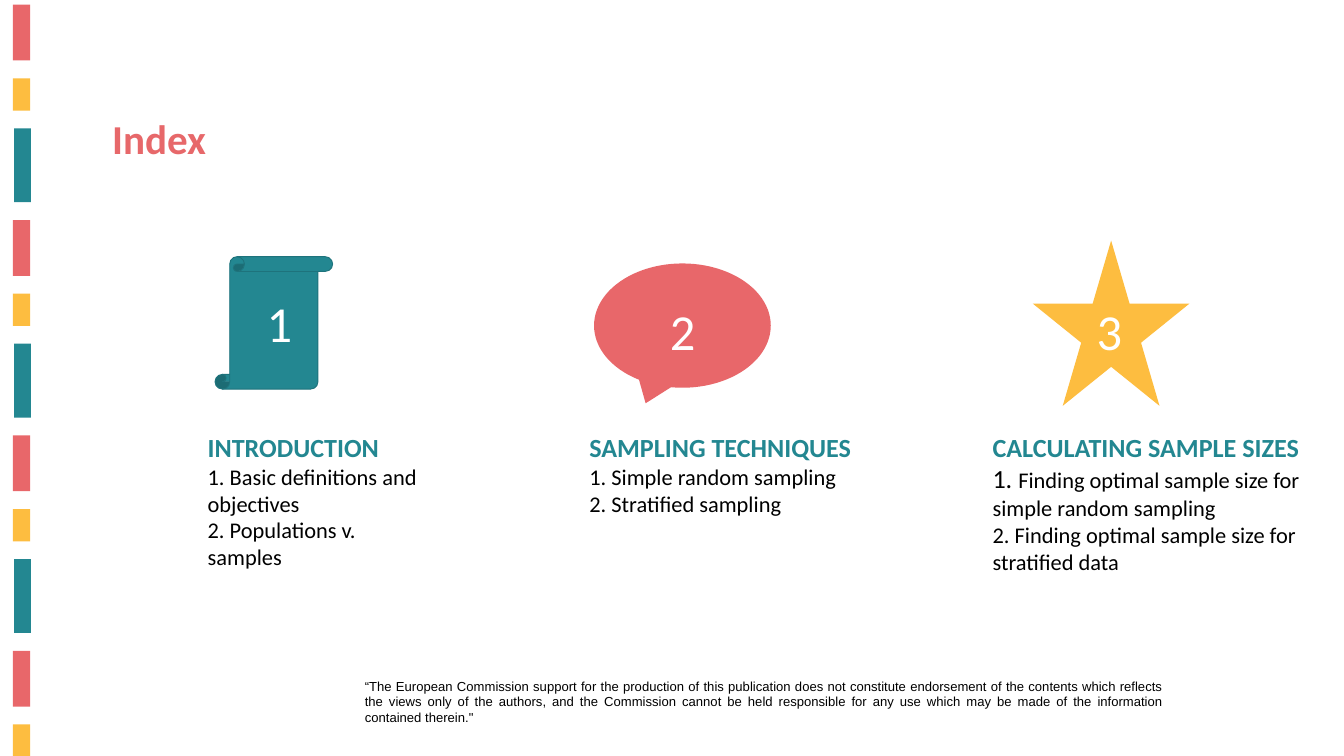
from dataclasses import dataclass
from itertools import cycle

import pptx
import pptx.dml.color
import pptx.enum.shapes
import pptx.enum.text
import pptx.util
from lxml import etree
from pptx.util import Inches

SHAPE = pptx.enum.shapes.MSO_SHAPE
ALIGN = pptx.enum.text.PP_ALIGN
COLORS = {
    "coral": "E8676A", "gold": "FDBD40", "teal": "238791", "edge": "1E737C",
    "title": "E7686A", "black": "000000", "white": "FFFFFF",
}
NOTICE = (
    "“The European Commission support for the production of this publication does not "
    "constitute endorsement of the contents which reflects the views only of the authors, "
    "and the Commission cannot be held responsible for any use which may be made of the "
    "information contained therein.\""
)
Box = tuple[float, float, float, float]


@dataclass
class Stripe:
    color: str
    left: float
    width: float
    height: float


@dataclass
class Icon:
    kind: SHAPE
    box: Box
    color: str
    tweaks: tuple[float, ...]
    label: Box
    edge: str = ""


@dataclass
class Topic:
    head: str
    items: tuple[str, ...]
    box: Box
    icon: Icon
    lead: int = 24  # size of the first item's number


STRIPES = (
    Stripe("coral", 0.19, 0.26, 0.83),
    Stripe("gold", 0.19, 0.26, 0.48),
    Stripe("teal", 0.21, 0.25, 1.1),
)
TOPICS = (
    Topic("INTRODUCTION", ("Basic definitions and objectives", "Populations v. samples"),
          (2.99, 6.37, 3.42, 2.89),
          Icon(SHAPE.VERTICAL_SCROLL, (3.2, 3.82, 1.75, 1.97), "teal", (0.125,),
               (3.87, 4.3, 1.58, 1.01), "edge")),
    Topic("SAMPLING TECHNIQUES", ("Simple random sampling", "Stratified sampling"),
          (8.67, 6.37, 4.55, 2.09),
          Icon(SHAPE.OVAL_CALLOUT, (8.84, 3.92, 2.63, 1.85), "coral", (-0.208, 0.625),
               (9.87, 4.41, 1.08, 1.01))),
    Topic("CALCULATING SAMPLE SIZES",
          ("Finding optimal sample size for simple random sampling",
           "Finding optimal sample size for stratified data"),
          (14.67, 6.37, 4.9, 2.49),
          Icon(SHAPE.STAR_5_POINT, (15.37, 3.58, 2.33, 2.46), "gold", (0.191,),
               (16.22, 4.41, 1.5, 1.01)), 28),
)


def rgb(name: str) -> pptx.dml.color.RGBColor:
    return pptx.dml.color.RGBColor.from_string(COLORS[name])


def style(para, size: int, color: str, bold: bool = False, face: str = "Calibri",
          align: ALIGN = ALIGN.LEFT) -> None:
    para.alignment = align
    para.space_before = pptx.util.Pt(0)
    font = para.font
    font.name, font.size, font.bold = face, pptx.util.Pt(size), bold
    font.color.rgb = rgb(color)


def place(shape, box: Box):
    """Move a text shape to its box and return its text frame, set at the top."""
    shape.left, shape.top, shape.width, shape.height = map(Inches, box)
    frame = shape.text_frame
    frame.word_wrap = True
    frame.auto_size = pptx.enum.text.MSO_AUTO_SIZE.NONE
    frame.vertical_anchor = pptx.enum.text.MSO_ANCHOR.TOP
    return frame


def clear_bullet(para) -> None:
    props = para._p.get_or_add_pPr()
    props.set("marL", "0")
    props.set("indent", "0")
    etree.SubElement(props, pptx.oxml.ns.qn("a:buNone"))


def add_text(slide, box: Box, text: str, size: int, color: str, **look) -> None:
    frame = place(slide.shapes.add_textbox(0, 0, 0, 0), box)
    frame.text = text
    style(frame.paragraphs[0], size, color, **look)


def add_solid(slide, kind: SHAPE, box: Box, color: str, edge: str = ""):
    shape = slide.shapes.add_shape(kind, *map(Inches, box))
    shape.shadow.inherit = False
    shape.fill.solid()
    shape.fill.fore_color.rgb = rgb(color)
    if edge:
        shape.line.color.rgb = rgb(edge)
        shape.line.width = pptx.util.Pt(1)
    else:
        shape.line.fill.background()
    return shape


def add_stripes(slide, top: float = 0.07, gap: float = 0.265, count: int = 11) -> None:
    for _, bar in zip(range(count), cycle(STRIPES)):
        height = min(bar.height, 11.25 - top)
        add_solid(slide, SHAPE.RECTANGLE, (bar.left, top, bar.width, height), bar.color)
        top += bar.height + gap


def fill_topic(holder, topic: Topic) -> None:
    frame = place(holder, topic.box)
    para = frame.paragraphs[0]
    para.text = topic.head
    clear_bullet(para)
    style(para, 28, "teal", bold=True)
    for count, item in enumerate(topic.items, 1):
        para = frame.add_paragraph()
        clear_bullet(para)
        style(para, 24, "black")
        mark = f"{count}. "
        if count == 1 and topic.lead != 24:
            run = para.add_run()
            run.text, run.font.size = mark, pptx.util.Pt(topic.lead)
            mark = ""
        para.add_run().text = mark + item


def add_icon(slide, icon: Icon, number: int) -> None:
    shape = add_solid(slide, icon.kind, icon.box, icon.color, icon.edge)
    for index, value in enumerate(icon.tweaks):
        shape.adjustments[index] = value
    add_text(slide, icon.label, str(number), 54, "white")


def main() -> None:
    deck = pptx.Presentation()
    deck.slide_width, deck.slide_height = Inches(20), Inches(11.25)
    slide = deck.slides.add_slide(deck.slide_layouts.get_by_name("Comparison"))
    title, *bodies = slide.placeholders

    add_stripes(slide)
    add_text(slide, (5.33, 10.04, 12.08, 0.81), NOTICE, 14, "black",
             face="Arial", align=ALIGN.JUSTIFY)
    frame = place(title, (1.57, 1.64, 6.77, 1.58))
    frame.text = "Index"
    style(frame.paragraphs[0], 44, "title", bold=True)

    for number, (holder, topic) in enumerate(zip(bodies, TOPICS), 1):
        fill_topic(holder, topic)
        add_icon(slide, topic.icon, number)
    for spare in bodies[len(TOPICS):]:
        spare.element.getparent().remove(spare.element)
    deck.save("out.pptx")


if __name__ == "__main__":
    main()
